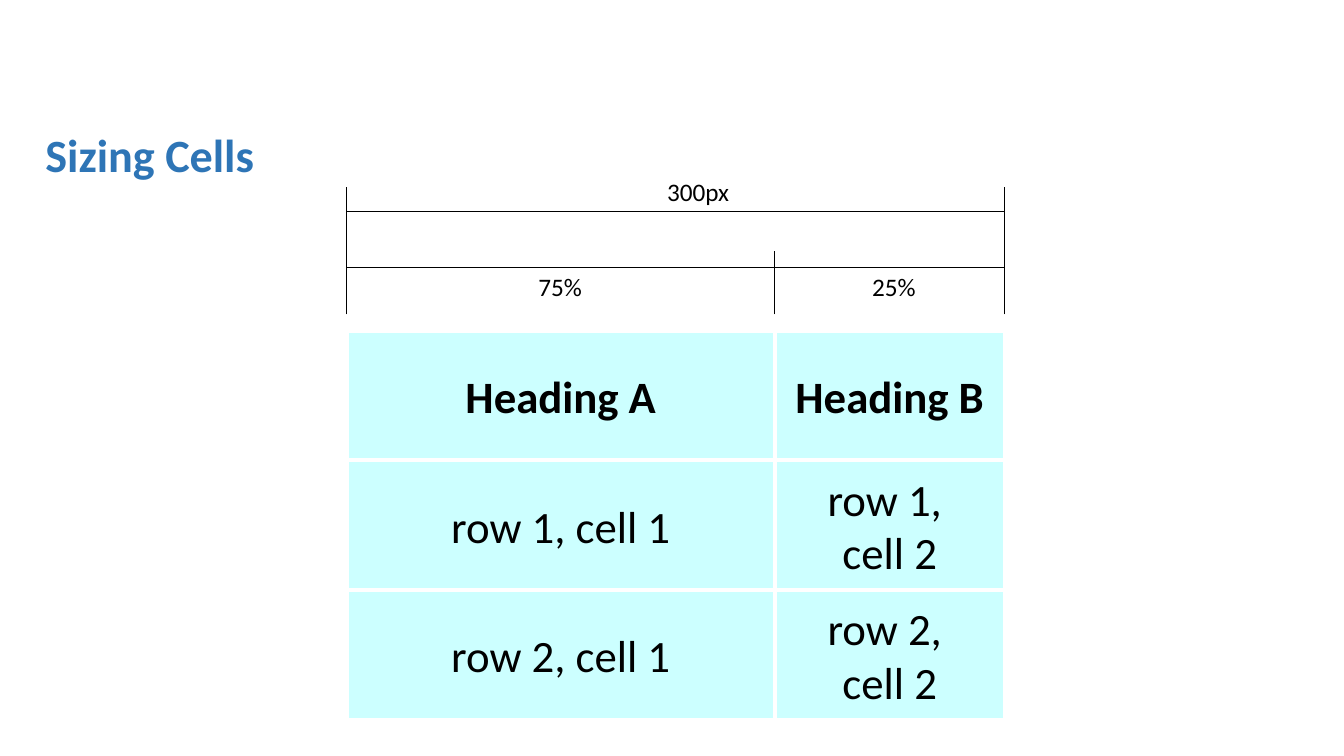
from pptx import Presentation
from pptx.dml.color import RGBColor
from pptx.enum.shapes import MSO_CONNECTOR as CONN, MSO_SHAPE as SHAPE
from pptx.enum.text import MSO_ANCHOR as ANCHOR, MSO_AUTO_SIZE as FIT, PP_ALIGN as ALIGN
from pptx.oxml.ns import qn
from pptx.util import Cm, Pt
from lxml import etree

COLORS = {"title": "2E75B6", "cell": "CCFFFF", "border": "FFFFFF", "ink": "000000"}
TITLE = {"size": Pt(33), "bold": True}
HEADING = {"size": Pt(32), "bold": True}
BODY = {"size": Pt(32), "bold": False}
LABEL = {"size": Pt(18), "bold": False}

ROWS = [
    ["Heading A", "Heading B"],
    ["row 1, cell 1", "row 1, \ncell 2"],
    ["row 2, cell 1", "row 2, \ncell 2"],
]
COL_WIDTHS = [10.79, 5.79]


def rgb(name):
    return RGBColor.from_string(COLORS[name])


def write(tf, text, fmt, color="ink", align=None):
    tf.text = text
    for p in tf.paragraphs:
        p.alignment = align
        for r in p.runs:
            r.font.name = "Calibri"
            r.font.color.rgb = rgb(color)
            for key, value in fmt.items():
                setattr(r.font, key, value)


def add_title(s, x, y, w, h):
    sp = s.shapes.title
    sp.left, sp.top, sp.width, sp.height = Cm(x), Cm(y), Cm(w), Cm(h)
    tf = sp.text_frame
    tf.vertical_anchor = ANCHOR.MIDDLE
    write(tf, "Sizing Cells", TITLE, "title", ALIGN.LEFT)
    tf.paragraphs[0].line_spacing = 0.9


def add_cells(s, x, y, row_h):
    for i, row in enumerate(ROWS):
        for j, text in enumerate(row):
            sp = s.shapes.add_shape(SHAPE.RECTANGLE, Cm(x + sum(COL_WIDTHS[:j])),
                                    Cm(y + i * row_h), Cm(COL_WIDTHS[j]), Cm(row_h))
            sp.shadow.inherit = False
            sp.fill.solid()
            sp.fill.fore_color.rgb = rgb("cell")
            sp.line.color.rgb = rgb("border")
            sp.line.width = Pt(3)
            tf = sp.text_frame
            tf.word_wrap = "\n" in text
            tf.vertical_anchor = ANCHOR.MIDDLE
            write(tf, text, BODY if i else HEADING, align=ALIGN.CENTER)


def add_line(s, x1, y1, x2, y2):
    line = s.shapes.add_connector(CONN.STRAIGHT, Cm(x1), Cm(y1), Cm(x2), Cm(y2))
    line.line.color.rgb = rgb("ink")
    line.line.width = Pt(0.75)
    etree.SubElement(line._element.spPr, qn("a:effectLst"))


def add_label(s, text, center, y, w):
    sp = s.shapes.add_textbox(Cm(center - w / 2), Cm(y), Cm(w), Cm(1.02))
    tf = sp.text_frame
    tf.word_wrap = False
    tf.auto_size = FIT.SHAPE_TO_FIT_TEXT
    write(tf, text, LABEL)


def add_dimensions(s, x, y, h):
    split, right = x + COL_WIDTHS[0], x + sum(COL_WIDTHS)
    # Upright ticks, the middle one shorter
    for tick_x, drop in [(x, 0), (split, 1.6), (right, 0)]:
        add_line(s, tick_x, y + h, tick_x, y + drop)
    # Measuring lines for the whole table and its columns
    for drop in (0.61, 2.01):
        add_line(s, x, y + drop, right, y + drop)
    add_label(s, "300px", (x + right) / 2 + 0.57, y - 0.4, 2.08)
    add_label(s, "75%", (x + split) / 2, y + 1.99, 1.63)
    add_label(s, "25%", (split + right) / 2 + 0.12, y + 1.99, 1.63)


def main():
    prs = Presentation()
    prs.slide_width, prs.slide_height = Cm(33.87), Cm(19.05)
    s = prs.slides.add_slide(prs.slide_layouts[5])
    add_title(s, 0.89, 2.72, 32.2, 2.51)
    add_cells(s, 8.74, 8.33, 3.27)
    add_dimensions(s, 8.74, 4.72, 3.2)
    prs.save("out.pptx")


if __name__ == "__main__":
    main()
